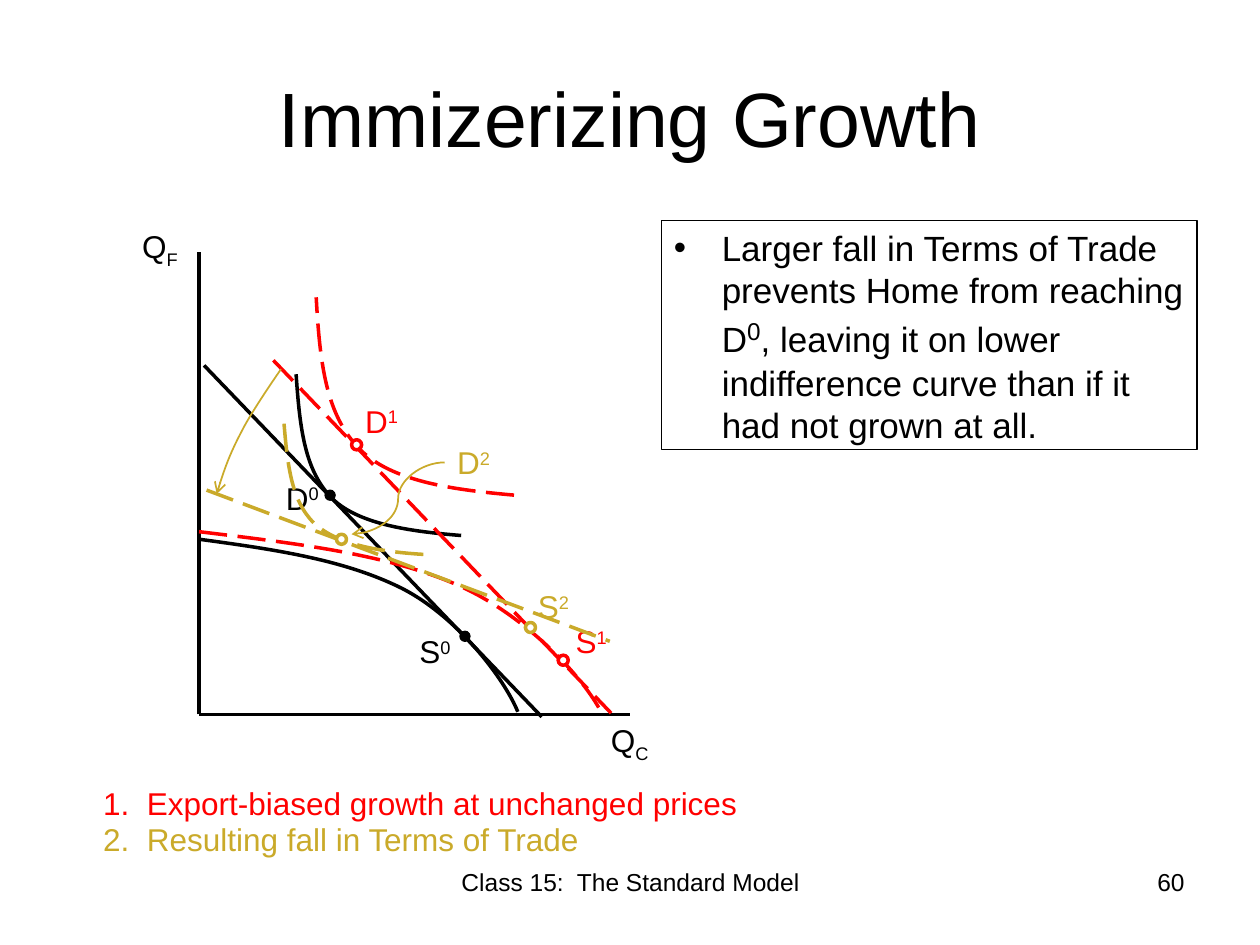
from lxml import etree
from pptx import Presentation
from pptx import util as u
from pptx.dml.color import RGBColor
from pptx.enum import dml, shapes, text
from pptx.oxml.ns import qn

PX = 9144  # EMU per px, 100 px to the inch
BLACK = RGBColor(0x00, 0x00, 0x00)
WHITE = RGBColor(0xFF, 0xFF, 0xFF)
RED = RGBColor(0xFF, 0x00, 0x00)
GOLD = RGBColor(0xCA, 0xAA, 0x2A)
LEFT, CENTER, RIGHT = text.PP_ALIGN.LEFT, text.PP_ALIGN.CENTER, text.PP_ALIGN.RIGHT
SUPER, SUB = 30, -25


def emu(*px):
    return [u.Emu(v * PX) for v in px]


class Diagram:
    """Holds the slide and the font, and draws each kind of element."""

    def __init__(self, s, font="Arial"):
        self.s = s
        self.font = font

    def run(self, p, words, size, color=BLACK, base=0):
        r = p.add_run()
        r.text = words
        r.font.name, r.font.size = self.font, u.Pt(size)
        r.font.color.rgb = color
        if base:
            r._r.get_or_add_rPr().set("baseline", str(base * 1000))

    def stroke(self, sp, color, width, dashed=False, arrow=None):
        """Style a line; arrow is "headEnd" (start) or "tailEnd" (finish)."""
        sp.line.color.rgb = color
        sp.line.width = u.Pt(width)
        if dashed:
            sp.line.dash_style = dml.MSO_LINE.LONG_DASH
        if arrow:
            ln = sp.line._get_or_add_ln()
            etree.SubElement(ln, qn("a:" + arrow)).set("type", "arrow")

    def title(self, words, x, y, w, h):
        sp = self.s.shapes.title
        sp.left, sp.top, sp.width, sp.height = emu(x, y, w, h)
        sp.text_frame.vertical_anchor = text.MSO_ANCHOR.MIDDLE
        p = sp.text_frame.paragraphs[0]
        p.alignment = CENTER
        self.run(p, words, 44)

    def text(self, x, y, w, h, runs, size=18, color=BLACK, align=LEFT):
        """Add a text box; runs are (words, baseline shift in percent)."""
        sp = self.s.shapes.add_textbox(*emu(x, y, w, h))
        sp.text_frame.word_wrap = True
        p = sp.text_frame.paragraphs[0]
        p.alignment = align
        for words, base in runs:
            self.run(p, words, size, color, base)

    def label(self, x, y, w, letter, index, color=BLACK):
        self.text(x, y, w, 40, [(letter, 0), (index, SUPER)], color=color)

    def axis_label(self, x, y, good):
        self.text(x, y, 75, 71, [("Q", 0), (good, SUB)])

    def bullet_box(self, x, y, w, h, runs):
        """Add a framed bullet; runs are (words, size, baseline shift)."""
        sp = self.s.shapes.add_textbox(*emu(x, y, w, h))
        self.stroke(sp, BLACK, 0.75)
        sp.text_frame.word_wrap = True
        p = sp.text_frame.paragraphs[0]
        p.space_before = u.Pt(4)
        pPr = p._p.get_or_add_pPr()
        indent = emu(38)[0]
        pPr.set("marL", str(indent))
        pPr.set("indent", str(-indent))
        etree.SubElement(pPr, qn("a:buFont")).set("typeface", self.font)
        etree.SubElement(pPr, qn("a:buChar")).set("char", "•")
        for words, size, base in runs:
            self.run(p, words, size, base=base)

    def line(self, start, end, color=BLACK, width=2, dashed=False, arrow=None,
             kind=shapes.MSO_CONNECTOR.STRAIGHT):
        sp = self.s.shapes.add_connector(kind, *emu(*start, *end))
        self.stroke(sp, color, width, dashed, arrow)
        etree.SubElement(sp._element.spPr, qn("a:effectLst"))

    def curve(self, knots, color=BLACK, width=2, dashed=False, arrow=None):
        """Draw joined Bezier curves: a start, then three knots for each."""
        fb = self.s.shapes.build_freeform(*knots[0], scale=PX)
        fb.add_line_segments(knots[1:], close=False)
        sp = fb.convert_to_shape()
        segments = list(sp._element.iter(qn("a:lnTo")))
        for i in range(0, len(segments), 3):
            bezier = etree.SubElement(segments[i].getparent(), qn("a:cubicBezTo"))
            for segment in segments[i:i + 3]:
                bezier.append(segment[0])
                segment.getparent().remove(segment)
        sp.shadow.inherit = False
        sp.fill.background()
        self.stroke(sp, color, width, dashed, arrow)

    def point(self, x, y, color, fill=WHITE, width=2):
        sp = self.s.shapes.add_shape(shapes.MSO_SHAPE.OVAL, *emu(x, y, 8, 8))
        sp.shadow.inherit = False
        sp.fill.solid()
        sp.fill.fore_color.rgb = fill
        self.stroke(sp, color, width)


def main():
    prs = Presentation()
    prs.slide_width, prs.slide_height = emu(1000, 750)
    d = Diagram(prs.slides.add_slide(prs.slide_layouts[5]))

    d.title("Immizerizing Growth", 50, 30, 900, 125)
    d.text(717, 683, 233, 52, [("60", 0)], 14, align=RIGHT)

    # Axes and explanation
    origin = (158, 567)
    d.line(origin, (500, 567))
    d.line(origin, (158, 200))
    d.axis_label(475, 567, "C")
    d.bullet_box(525, 175, 425, 182, [
        ("Larger fall in Terms of Trade prevents Home from reaching D", 20, 0),
        ("0", 24, SUPER),
        (", leaving it on lower indifference curve than if it had not grown at all.", 20, 0)])
    d.axis_label(103, 175, "F")

    # Before growth: price line, production curve, indifference curve
    d.line((162, 290), (430, 569))
    d.point(258, 389, BLACK, BLACK, 0.75)
    d.curve([(158, 428), (217, 436), (273, 444), (319, 467),
             (364, 490), (401, 540), (411, 565)])
    d.point(365, 501, BLACK, BLACK, 0.75)
    d.label(323, 497, 47, "S", "0")
    d.label(217, 375, 48, "D", "0")
    d.curve([(366, 425), (329, 422), (286, 417), (264, 396),
             (242, 374), (238, 341), (235, 297)])

    # Growth at unchanged prices
    d.curve([(158, 422), (232, 431), (303, 439), (360, 463),
             (417, 487), (464, 539), (477, 565)], RED, dashed=True)
    d.line((217, 286), (485, 566), RED, dashed=True)
    d.curve([(408, 393), (363, 389), (312, 383), (286, 357),
             (259, 330), (254, 290), (251, 236)], RED, dashed=True)
    d.label(447, 489, 47, "S", "1", RED)
    d.label(280, 314, 58, "D", "1", RED)
    d.text(67, 617, 533, 40, [("1.  Export-biased growth at unchanged prices", 0)],
           color=RED, align=CENTER)

    # Fall in the terms of trade
    d.line((164, 389), (484, 509), GOLD, dashed=True)
    d.point(417, 494, GOLD)
    d.label(417, 461, 47, "S", "2", GOLD)
    d.curve([(336, 440), (304, 438), (268, 433), (249, 415),
             (231, 397), (228, 369), (225, 331)], GOLD, dashed=True)
    d.point(267, 424, GOLD)
    d.label(353, 347, 58, "D", "2", GOLD)
    d.line((353, 367), (279, 424), GOLD, 1, arrow="tailEnd",
           kind=shapes.MSO_CONNECTOR.CURVE)
    d.text(72, 646, 533, 40, [("2.  Resulting fall in Terms of Trade", 0)], color=GOLD)

    d.point(279, 349, RED)
    d.point(443, 520, RED)
    d.curve([(172, 392), (177, 375), (183, 359), (192, 342),
             (200, 326), (223, 293), (223, 293)], GOLD, 1, arrow="headEnd")
    d.text(342, 683, 317, 52, [("Class 15:  The Standard Model", 0)], 14, align=CENTER)

    prs.save("out.pptx")


if __name__ == "__main__":
    main()
